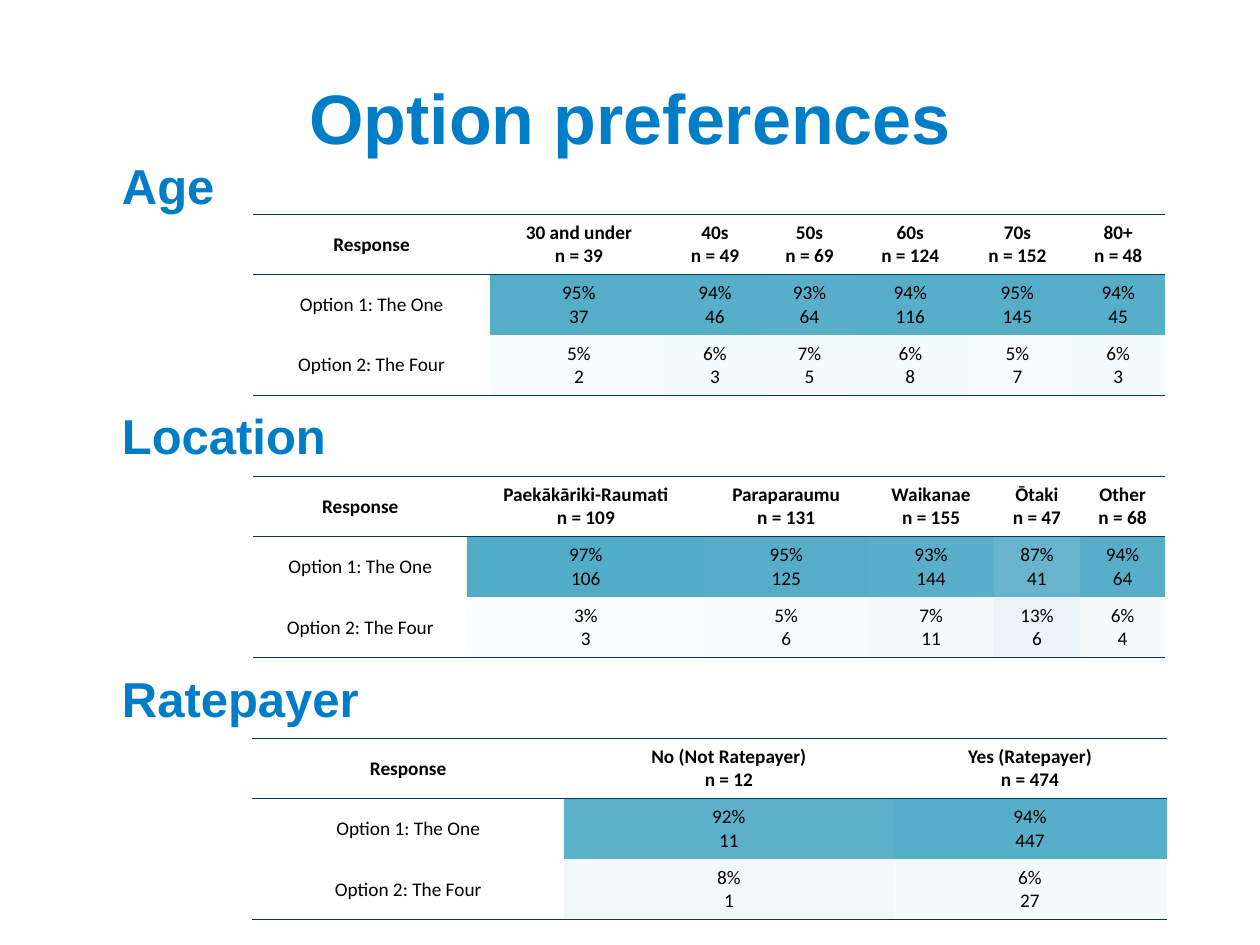
from lxml import etree
from pptx import Presentation
from pptx.dml.color import RGBColor
from pptx.enum.text import MSO_ANCHOR, PP_ALIGN
from pptx.oxml.ns import qn
from pptx.util import Inches, Pt

CENTER, LEFT = PP_ALIGN.CENTER, PP_ALIGN.LEFT
MIDDLE = MSO_ANCHOR.MIDDLE

BLUE = RGBColor(0x00, 0x7D, 0xC6)
NAVY = RGBColor(0x00, 0x3B, 0x5C)
BLACK = RGBColor(0x00, 0x00, 0x00)
WHITE = RGBColor(0xFF, 0xFF, 0xFF)

# Heat-map fill for each percentage
SHARE_FILLS = {
    97: RGBColor(0x50, 0xAC, 0xC7),
    95: RGBColor(0x55, 0xAD, 0xC8),
    94: RGBColor(0x57, 0xAE, 0xC8),
    93: RGBColor(0x59, 0xAF, 0xC9),
    92: RGBColor(0x5C, 0xB0, 0xCA),
    87: RGBColor(0x67, 0xB4, 0xCC),
    13: RGBColor(0xEA, 0xF4, 0xF7),
    8: RGBColor(0xF2, 0xF8, 0xFA),
    7: RGBColor(0xF4, 0xF9, 0xFB),
    6: RGBColor(0xF5, 0xFA, 0xFB),
    5: RGBColor(0xF7, 0xFB, 0xFC),
    3: RGBColor(0xFA, 0xFC, 0xFD),
}

OPTIONS = ["Option 1: The One", "Option 2: The Four"]
ROW_HEIGHT = 0.48
RULED_SIDES = ["TB", "T", "B"]  # ruled sides of each table row

# Each group: name, sample size, (percentage, count) for each option
AGE = [
    ("30 and under", 39, (95, 37), (5, 2)),
    ("40s", 49, (94, 46), (6, 3)),
    ("50s", 69, (93, 64), (7, 5)),
    ("60s", 124, (94, 116), (6, 8)),
    ("70s", 152, (95, 145), (5, 7)),
    ("80+", 48, (94, 45), (6, 3)),
]
LOCATION = [
    ("Paekākāriki-Raumati", 109, (97, 106), (3, 3)),
    ("Paraparaumu", 131, (95, 125), (5, 6)),
    ("Waikanae", 155, (93, 144), (7, 11)),
    ("Ōtaki", 47, (87, 41), (13, 6)),
    ("Other", 68, (94, 64), (6, 4)),
]
RATEPAYER = [
    ("No (Not Ratepayer)", 12, (92, 11), (8, 1)),
    ("Yes (Ratepayer)", 474, (94, 447), (6, 27)),
]


def write_text(frame, *lines, size, font, color, bold=False, align=CENTER, spacing=None):
    """Write lines as one paragraph with line breaks between them."""
    para = frame.paragraphs[0]
    para.alignment = align
    para.line_spacing = spacing
    for index, line in enumerate(lines):
        if index:
            para.add_line_break()
        span = para.add_run()
        span.text = line
        span.font.size = Pt(size)
        span.font.name = font
        span.font.bold = bold
        span.font.color.rgb = color


def add_title(page, text):
    title = page.shapes.title
    title.left, title.top = Inches(0.5), Inches(0.3)
    title.width, title.height = Inches(9), Inches(1.25)
    title.text_frame.vertical_anchor = MIDDLE
    write_text(title.text_frame, text, size=40, font="Arial", color=BLUE, bold=True)


def add_heading(page, text, top, height):
    box = page.shapes.add_textbox(Inches(0.87), Inches(top), Inches(3.86), Inches(height))
    box.text_frame.word_wrap = True
    box.text_frame.vertical_anchor = MIDDLE
    write_text(box.text_frame, text, size=28, font="Arial", color=BLUE, bold=True, align=LEFT)


def set_borders(cell, ruled):
    """Rule the named sides of a cell and clear the others."""
    properties = cell._tc.get_or_add_tcPr()
    for side in "LRTB":
        line = etree.SubElement(properties, qn(f"a:ln{side}"), w=str(Pt(0.75)))
        if side in ruled:
            fill = etree.SubElement(line, qn("a:solidFill"))
            etree.SubElement(fill, qn("a:srgbClr"), val=str(NAVY))
        else:
            etree.SubElement(line, qn("a:noFill"))


def fill_cell(cell, *lines, ruled, fill=WHITE, bold=False):
    set_borders(cell, ruled)
    cell.fill.solid()
    cell.fill.fore_color.rgb = fill
    cell.vertical_anchor = MIDDLE
    write_text(cell.text_frame, *lines, size=11, font="Calibri", color=BLACK,
               bold=bold, spacing=Pt(13.5))


def add_response_table(page, groups, left, top, widths):
    row_count = len(OPTIONS) + 1
    table = page.shapes.add_table(
        row_count, len(widths), Inches(left), Inches(top),
        Inches(sum(widths)), Inches(ROW_HEIGHT * row_count)).table
    table.horz_banding = False
    table.first_row = False
    for column, width in zip(table.columns, widths):
        column.width = Inches(width)
    for row in table.rows:
        row.height = Inches(ROW_HEIGHT)

    # Response labels
    fill_cell(table.cell(0, 0), "Response", ruled=RULED_SIDES[0], bold=True)
    for row, option in enumerate(OPTIONS, 1):
        fill_cell(table.cell(row, 0), option, ruled=RULED_SIDES[row])

    # One column for each group
    for column, (name, sample, *results) in enumerate(groups, 1):
        fill_cell(table.cell(0, column), name, f"n = {sample}",
                  ruled=RULED_SIDES[0], bold=True)
        for row, (share, count) in enumerate(results, 1):
            fill_cell(table.cell(row, column), f"{share}%", str(count),
                      ruled=RULED_SIDES[row], fill=SHARE_FILLS[share])


def main():
    deck = Presentation()
    deck.slide_width, deck.slide_height = Inches(10), Inches(7.5)
    page = deck.slides.add_slide(deck.slide_layouts[5])
    add_title(page, "Option preferences")

    # Tables
    add_response_table(page, LOCATION, 2.01, 3.78, [1.7, 1.88, 1.3, 1, 0.68, 0.68])
    add_response_table(page, AGE, 2.01, 1.7, [1.88, 1.41, 0.75, 0.75, 0.85, 0.85, 0.75])
    add_response_table(page, RATEPAYER, 2, 5.86, [2.48, 2.61, 2.17])

    # Section headings
    add_heading(page, "Age", 1.27, 0.4)
    add_heading(page, "Location", 3.13, 0.64)
    add_heading(page, "Ratepayer", 5.22, 0.64)

    deck.save("out.pptx")


if __name__ == "__main__":
    main()
